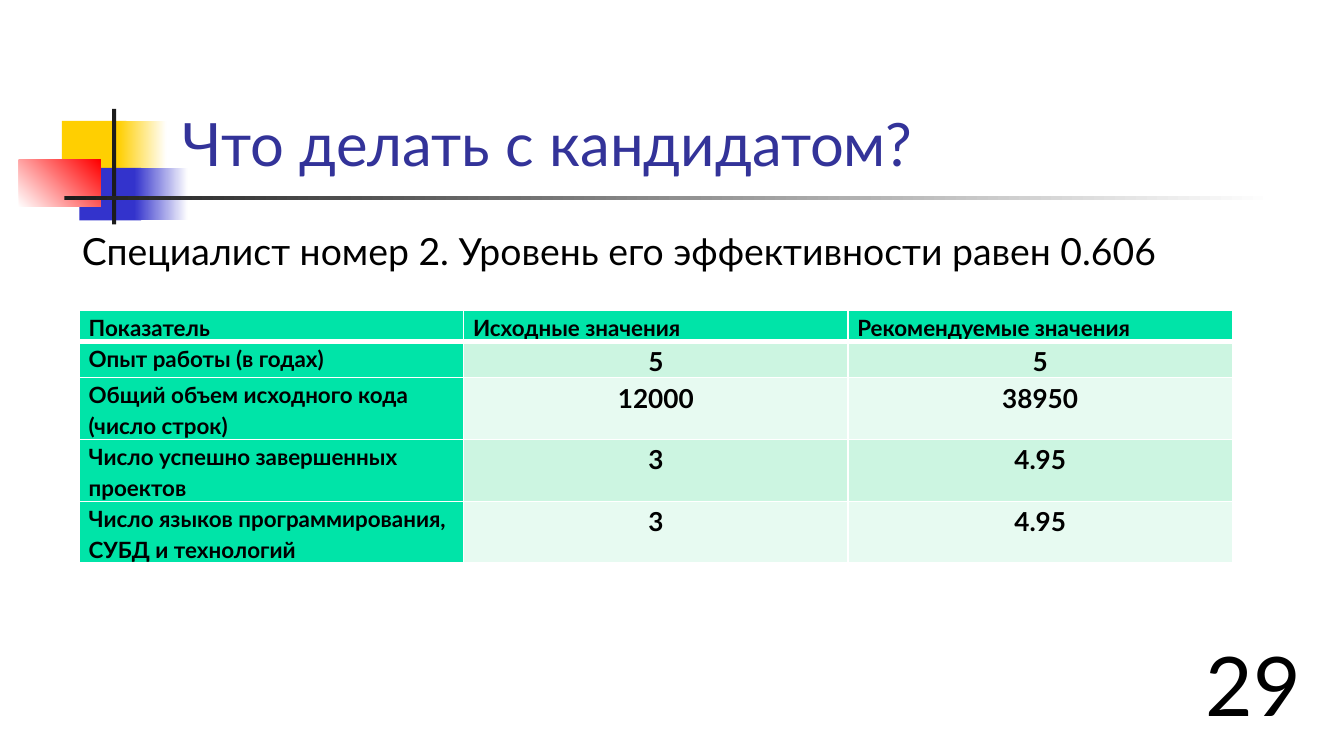
from lxml import etree
from pptx import Presentation, util as u
from pptx.dml.color import RGBColor
from pptx.enum import shapes, text
from pptx.oxml.ns import qn

FONT = "Lato"
HUES = {
    "gold": "FFCF01", "blue": "3333CC", "red": "FF0000", "dark": "1C1C1C",
    "white": "FFFFFF", "title": "333399", "ink": "000000",
    "head": "00E4A8", "odd": "CCF5E1", "even": "E7FAF1",
}
COLS = 100  # grid columns across the slide; rows use the same step
WIDE = u.Inches(10)
TALL = u.Emu(WIDE * 9 // 16)
STEP = WIDE / COLS

ROWS = [
    ("Показатель", "Исходные значения", "Рекомендуемые значения"),
    ("Опыт работы (в годах)", "5", "5"),
    ("Общий объем исходного кода (число строк)", "12000", "38950"),
    ("Число успешно завершенных проектов", "3", "4.95"),
    ("Число языков программирования, СУБД и технологий", "3", "4.95"),
]
HIGH = [2.3, 2.7, 4.6, 4.6, 4.6]


def grid(*nums):
    return [u.Emu(round(n * STEP)) for n in nums]


def hue(name):
    return RGBColor.from_string(HUES[name])


def style(para, size, color="ink", align=None, bold=False):
    font = para.font
    font.name, font.size, font.bold = FONT, u.Pt(size), bold
    font.color.rgb = hue(color)
    para.alignment = align


def block(slide, box, *tones, angle=0):
    """Add a plain rectangle: one tone is solid, two make a gradient."""
    rect = slide.shapes.add_shape(shapes.MSO_SHAPE.RECTANGLE, *grid(*box))
    rect.shadow.inherit = False
    rect.line.fill.background()
    if len(tones) == 1:
        rect.fill.solid()
        rect.fill.fore_color.rgb = hue(tones[0])
        return
    rect.fill.gradient()
    rect.fill.gradient_angle = angle
    for stop, tone in zip(rect.fill.gradient_stops, tones):
        stop.color.rgb = hue(tone)


def motif(slide, box):
    x, y, w, h = box
    block(slide, (x + 3.2, y + 0.9, 4.8, 3.9), "gold")
    block(slide, (x + 7.4, y + 0.9, 3.6, 3.9), "gold", "white")
    block(slide, (x + 4.5, y + 4.4, 4.6, 3.9), "blue")
    block(slide, (x + 8.6, y + 4.4, 4, 3.9), "blue", "white")
    block(slide, (x, y + 3.8, 6.1, 3.5), "white", "red", angle=45)
    block(slide, (x + 6.95, y, 0.3, h), "dark")
    block(slide, (x + 3.4, y + 6.5, w - 3.4, 0.3), "dark", "white")


def heading(slide, box, words):
    title = slide.shapes.title
    title.left, title.top, title.width, title.height = grid(*box)
    frame = title.text_frame
    frame.text = words
    frame.auto_size = text.MSO_AUTO_SIZE.NONE
    frame.vertical_anchor = text.MSO_ANCHOR.BOTTOM
    style(frame.paragraphs[0], 32, "title", text.PP_ALIGN.LEFT)


def label(slide, box, words, size, align, anchor):
    frame = slide.shapes.add_textbox(*grid(*box)).text_frame
    frame.word_wrap = True
    frame.vertical_anchor = anchor
    frame.text = words
    style(frame.paragraphs[0], size, align=align)


def border(cell, low):
    """Draw white cell edges; low is the width of the bottom one."""
    props = cell._tc.get_or_add_tcPr()
    edges = [("lnL", 1), ("lnR", 1), ("lnT", 1), ("lnB", low)]
    for spot, (tag, width) in enumerate(edges):
        line = etree.Element(qn("a:" + tag), w=str(u.Pt(width)))
        fill = etree.SubElement(line, qn("a:solidFill"))
        etree.SubElement(fill, qn("a:srgbClr"), val=HUES["white"])
        props.insert(spot, line)


def fill_cell(cell, words, row, col):
    head, key = row == 0, col == 0
    cell.margin_left = cell.margin_right = u.Inches(0.07)
    cell.margin_top = cell.margin_bottom = 0
    cell.text = words
    para = cell.text_frame.paragraphs[0]
    para.line_spacing = 1.15
    if head:
        align = text.PP_ALIGN.JUSTIFY
    else:
        align = text.PP_ALIGN.LEFT if key else text.PP_ALIGN.CENTER
    style(para, 12 if head or key else 14, align=align, bold=True)
    tone = "head" if head or key else ("even", "odd")[row % 2]
    cell.fill.solid()
    cell.fill.fore_color.rgb = hue(tone)
    border(cell, 3 if head else 1)


def scores(slide, box):
    count = len(ROWS[0])
    table = slide.shapes.add_table(len(ROWS), count, *grid(*box)).table
    for col in table.columns:
        col.width = grid(box[2] / count)[0]
    for r, (words, high) in enumerate(zip(ROWS, HIGH)):
        table.rows[r].height = grid(high)[0]
        for c, word in enumerate(words):
            fill_cell(table.cell(r, c), word, r, c)


def main():
    deck = Presentation()
    deck.slide_width, deck.slide_height = WIDE, TALL
    slide = deck.slides.add_slide(deck.slide_layouts[5])
    motif(slide, (1.4, 8.1, 93.4, 8.6))
    heading(slide, (12.6, 7.7, 85.2, 6.1), "Что делать с кандидатом?")
    label(slide, (5.1, 16.5, 92.8, 33.8),
          "Специалист номер 2. Уровень его эффективности равен 0.606",
          20, text.PP_ALIGN.LEFT, text.MSO_ANCHOR.TOP)
    label(slide, (77, 51.2, 20.8, 3.8), "29",
          44, text.PP_ALIGN.RIGHT, text.MSO_ANCHOR.BOTTOM)
    scores(slide, (5.9, 23.1, 85.8, sum(HIGH)))
    deck.save("out.pptx")


if __name__ == "__main__":
    main()
